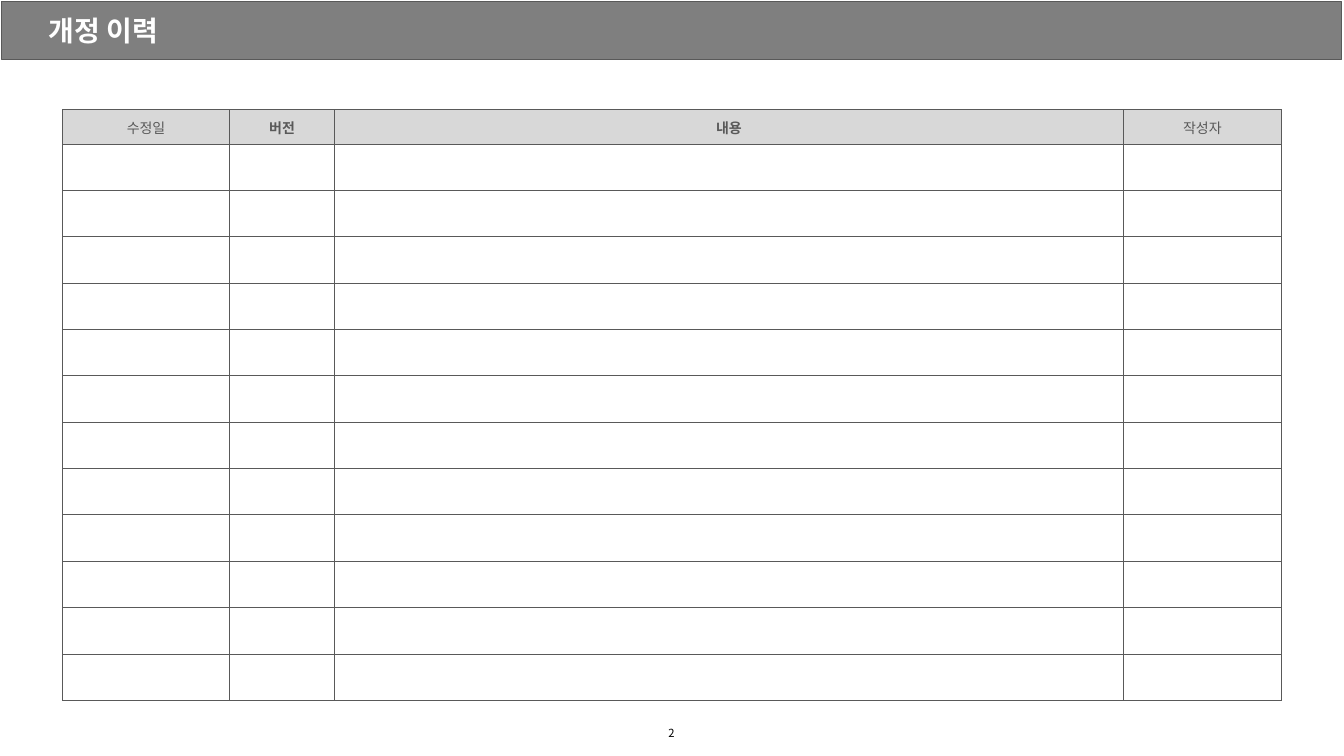
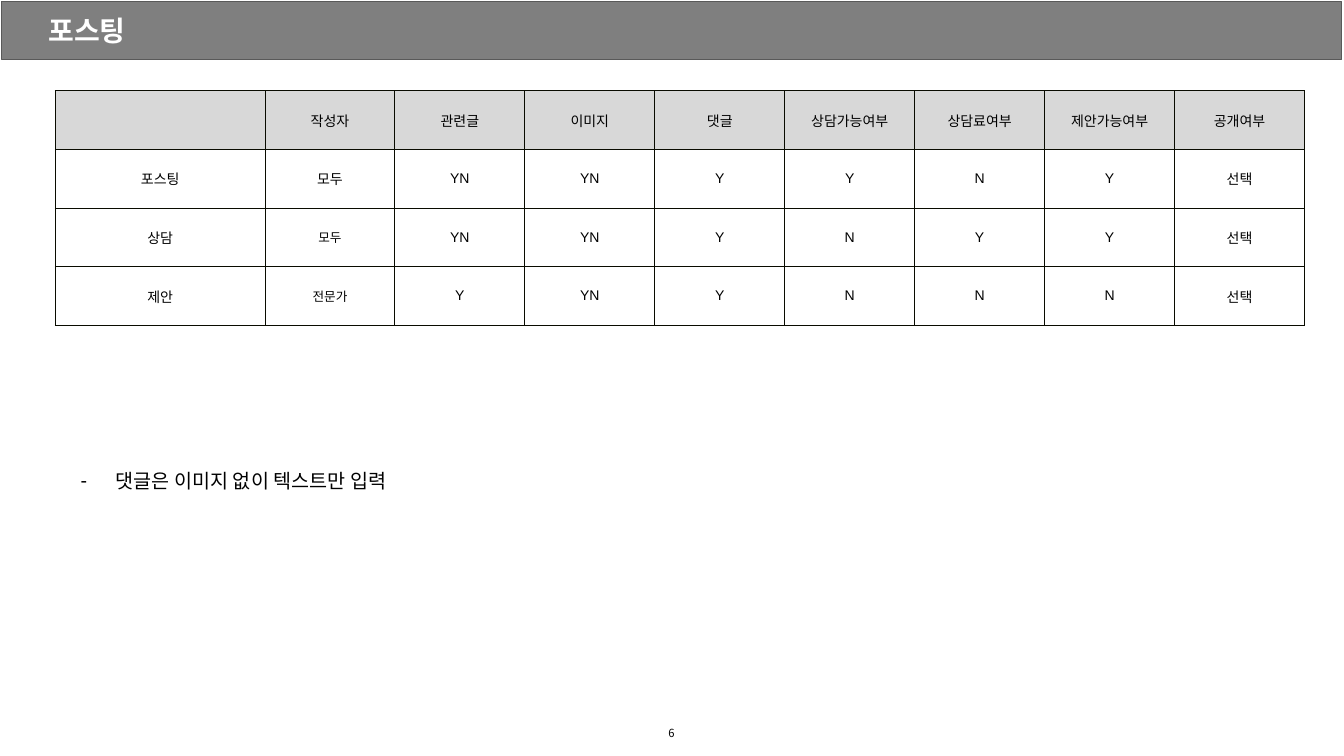
from lxml.etree import SubElement
from pptx import Presentation
from pptx.dml.color import RGBColor
from pptx.enum.shapes import MSO_SHAPE
from pptx.enum.text import MSO_ANCHOR as ANCHOR, MSO_AUTO_SIZE as AUTO_SIZE, PP_ALIGN as ALIGN
from pptx.oxml.ns import qn
from pptx.util import Inches, Pt

BLACK = RGBColor(0x00, 0x00, 0x00)
WHITE = RGBColor(0xFF, 0xFF, 0xFF)
BAND_GRAY = RGBColor(0x7F, 0x7F, 0x7F)
DARK_GRAY = RGBColor(0x59, 0x59, 0x59)
HEADER_GRAY = RGBColor(0xD8, 0xD8, 0xD8)
GRID_BLACK = RGBColor(0x09, 0x0B, 0x00)
KOREAN_FONT = "Noto Sans CJK KR"


def write(holder, text, size=10, font="Arial", color=BLACK, bold=False,
          align=ALIGN.CENTER, anchor=ANCHOR.MIDDLE, margins=(0.1, 0.05, 0.1, 0.05)):
    """Put one formatted line into a shape or a table cell; return its paragraph."""
    is_shape = hasattr(holder, "shape_id")
    box = holder.text_frame if is_shape else holder
    box.margin_left, box.margin_top, box.margin_right, box.margin_bottom = map(Inches, margins)
    box.vertical_anchor = anchor
    if is_shape:
        box.word_wrap = True
        box.auto_size = AUTO_SIZE.NONE
    paragraph = holder.text_frame.paragraphs[0]
    paragraph.alignment = align
    run = paragraph.add_run()
    run.text = text
    run.font.size, run.font.bold, run.font.name = Pt(size), bold, font
    run.font.color.rgb = color
    SubElement(run.font._element, qn("a:ea"), typeface=KOREAN_FONT)
    return paragraph


def add_grid(slide, left, top, widths, heights, border):
    """Add an empty table with a gray header row and thin borders."""
    table = slide.shapes.add_table(
        len(heights), len(widths), Inches(left), Inches(top),
        Inches(sum(widths)), Inches(sum(heights))).table
    table.first_row = table.horz_banding = False
    for column, width in zip(table.columns, widths):
        column.width = Inches(width)
    for index, (row, height) in enumerate(zip(table.rows, heights)):
        row.height = Inches(height)
        for cell in row.cells:
            properties = cell._tc.get_or_add_tcPr()
            for side in ("a:lnL", "a:lnR", "a:lnT", "a:lnB"):
                line = SubElement(properties, qn(side), w=str(Pt(0.75)))
                fill = SubElement(line, qn("a:solidFill"))
                SubElement(fill, qn("a:srgbClr"), val=str(border))
            cell.fill.solid()
            cell.fill.fore_color.rgb = WHITE if index else HEADER_GRAY
    return table


presentation = Presentation()
presentation.slide_width, presentation.slide_height = Inches(13.34), Inches(7.5)
master = presentation.slide_master
master_title = master.placeholders[0]
master_title.left, master_title.top = Inches(0.29), Inches(0)
master_title.width, master_title.height = Inches(12.76), Inches(0.6)

# Slides with title and page number
title_only, title_and_content = presentation.slide_layouts[5], presentation.slide_layouts[1]
for layout, title, page in ((title_only, "개정 이력", "2"), (title_and_content, "포스팅", "6")):
    slide = presentation.slides.add_slide(layout)
    write(slide.shapes.title, title, size=20, font=KOREAN_FONT, color=WHITE, bold=True,
          align=ALIGN.LEFT, margins=(0.19, 0.06, 0.11, 0.06))
    page_number = slide.shapes.add_textbox(Inches(0), Inches(7.08), Inches(13.33), Inches(0.39))
    write(page_number, page, size=8, font=KOREAN_FONT)
history_slide, posting_slide = presentation.slides

# Title band, moved to the master behind its placeholders
band = history_slide.shapes.add_shape(
    MSO_SHAPE.RECTANGLE, Inches(0.02), Inches(0.02), Inches(13.3), Inches(0.57))
band.shadow.inherit = False
band.fill.solid()
band.fill.fore_color.rgb = BAND_GRAY
band.line.color.rgb = DARK_GRAY
band.line.width = Pt(0.75)
band._element.nvSpPr.cNvPr.set("id", "20")
master.shapes._spTree.insert(2, band._element)

# Revision history
history = add_grid(history_slide, 0.62, 1.09, [1.66, 1.04, 7.83, 1.57],
                   [0.32] + [0.46] * 12, DARK_GRAY)
history_header = (("수정일", False), ("버전", True), ("내용", True), ("작성자", False))
for cell, (label, bold) in zip(history.rows[0].cells, history_header):
    write(cell, label, color=DARK_GRAY, bold=bold, margins=(0.13, 0.07, 0.13, 0.07))

# Posting rules
posting_rows = (
    ("", "작성자", "관련글", "이미지", "댓글", "상담가능여부", "상담료여부", "제안가능여부", "공개여부"),
    ("포스팅", "모두", "YN", "YN", "Y", "Y", "N", "Y", "선택"),
    ("상담", "모두", "YN", "YN", "Y", "N", "Y", "Y", "선택"),
    ("제안", "전문가", "Y", "YN", "Y", "N", "N", "N", "선택"),
)
posting = add_grid(posting_slide, 0.55, 0.9, [2.08] + [1.29] * 8, [2.33 / 4] * 4, GRID_BLACK)
for row_index, labels in enumerate(posting_rows):
    for column_index, label in enumerate(labels):
        if label:
            small = row_index >= 2 and column_index == 1
            write(posting.cell(row_index, column_index), label, size=9 if small else 10,
                  margins=(0.02, 0, 0.02, 0))

# Note below the table
note = posting_slide.placeholders[1]
note.left, note.top, note.width, note.height = map(Inches, (0.55, 4.55, 9.69, 0.44))
paragraph = write(note, "댓글은 이미지 없이 텍스트만 입력", size=14, align=ALIGN.LEFT,
                  anchor=ANCHOR.TOP, margins=(0.1, 0.1, 0.1, 0.1))
note.text_frame.auto_size = AUTO_SIZE.SHAPE_TO_FIT_TEXT
paragraph.space_before = Pt(0)
bullet = paragraph._p.get_or_add_pPr()
bullet.set("marL", str(Inches(0.5)))
bullet.set("indent", str(Inches(-0.35)))
SubElement(SubElement(bullet, qn("a:buClr")), qn("a:srgbClr"), val=str(BLACK))
SubElement(bullet, qn("a:buFont"), typeface="Arial")
SubElement(bullet, qn("a:buChar"), char="-")

presentation.save("out.pptx")
